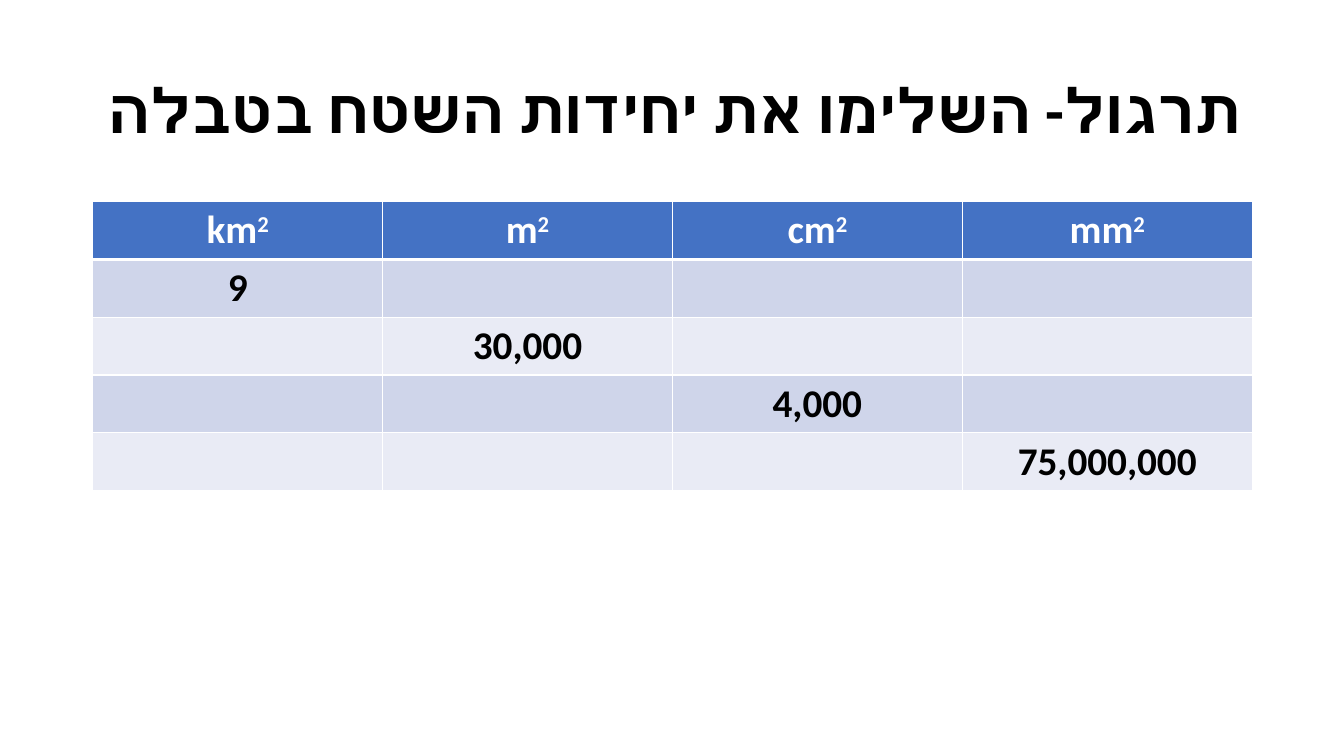
import pptx
import pptx.util
import pptx.dml.color
import pptx.enum.text
import pptx.oxml
import pptx.oxml.ns

Inches = pptx.util.Inches
Pt = pptx.util.Pt

COLORS = {
    "white": "FFFFFF",
    "black": "000000",
    "header": "4472C4",
    "odd_row": "CFD5EA",
    "even_row": "E9EBF5",
}
UNITS = ["km", "m", "cm", "mm"]
AMOUNTS = ["9", "30,000", "4,000", "75,000,000"]


def color(name):
    return pptx.dml.color.RGBColor.from_string(COLORS[name])


def add_text(para, text, size=28, font="Calibri", fill="black", raised=False):
    span = para.add_run()
    span.text = text
    span.font.size = Pt(size)
    span.font.name = font
    span.font.bold = True
    span.font.color.rgb = color(fill)
    properties = span.font._element
    properties.append(properties.makeelement(
        pptx.oxml.ns.qn("a:cs"), {"typeface": "Calibri"}))
    if raised:
        properties.set("baseline", "30000")


def add_title(page, left, top, width, height):
    box = page.shapes.add_textbox(left, top, width, height)
    frame = box.text_frame
    frame.word_wrap = True
    frame.vertical_anchor = pptx.enum.text.MSO_ANCHOR.MIDDLE
    para = frame.paragraphs[0]
    para.alignment = pptx.enum.text.PP_ALIGN.RIGHT
    para.line_spacing = 0.9
    para._p.get_or_add_pPr().set("rtl", "1")
    add_text(para, "תרגול- השלימו את יחידות השטח בטבלה", size=44, font="Arial")


def style_cell(cell, fill, top=1, bottom=1):
    properties = cell._tc.get_or_add_tcPr()
    for side, points in (("L", 1), ("R", 1), ("T", top), ("B", bottom)):
        properties.append(pptx.oxml.parse_xml(
            f'<a:ln{side} xmlns:a="http://schemas.openxmlformats.org/drawingml/2006/main" '
            f'w="{Pt(points)}"><a:solidFill><a:srgbClr val="{COLORS["white"]}"/>'
            f'</a:solidFill></a:ln{side}>'))
    cell.fill.solid()
    cell.fill.fore_color.rgb = color(fill)
    cell.text_frame.paragraphs[0].alignment = pptx.enum.text.PP_ALIGN.CENTER


def add_unit_table(page, left, top, width, height):
    row_count = len(AMOUNTS) + 1
    table = page.shapes.add_table(
        row_count, len(UNITS), left, top, width, height).table
    for column, unit in enumerate(UNITS):
        header = table.cell(0, column)
        style_cell(header, "header", bottom=3)
        para = header.text_frame.paragraphs[0]
        add_text(para, unit, fill="white")
        add_text(para, "2", fill="white", raised=True)
        for row in range(1, row_count):
            style_cell(table.cell(row, column),
                       "odd_row" if row % 2 else "even_row",
                       top=3 if row == 1 else 1)
        given = table.cell(column + 1, column)
        add_text(given.text_frame.paragraphs[0], AMOUNTS[column])


def main():
    deck = pptx.Presentation()
    deck.slide_width = Inches(13.33)
    deck.slide_height = Inches(7.5)
    page = deck.slides.add_slide(deck.slide_layouts[6])
    left, width = Inches(0.92), Inches(11.5)
    add_title(page, left, Inches(0.4), width, Inches(1.45))
    add_unit_table(page, left, Inches(2), width, Inches(2.87))
    deck.save("out.pptx")


if __name__ == "__main__":
    main()
